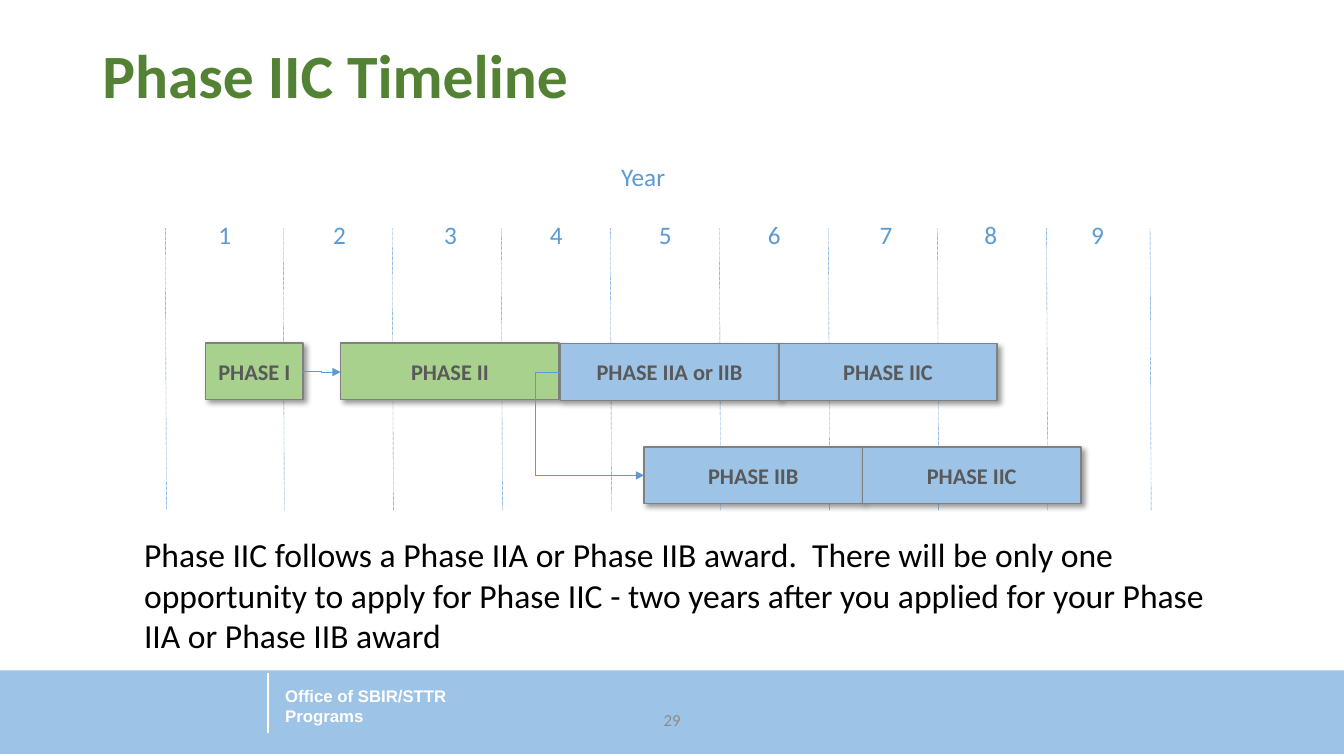
"""Build the Phase IIC timeline slide."""
from lxml import etree
from pptx import Presentation
from pptx.dml.color import RGBColor as Rgb
from pptx.enum.dml import MSO_LINE as Dash
from pptx.enum.shapes import MSO_CONNECTOR as Conn, MSO_SHAPE as Kind
from pptx.enum.text import MSO_ANCHOR as Anchor, PP_ALIGN as Align
from pptx.oxml import parse_xml
from pptx.oxml.ns import nsdecls, qn
from pptx.util import Pt

THEME = {
    "green": "A9D18E", "blue": "9DC3E6", "edge": "808080", "line": "5B9BD5",
    "white": "FFFFFF", "title": {"size": 44, "color": "548235", "bold": True},
    "axis": {"size": 18, "color": "5B9BD5"},
    "phase": {"size": 16, "color": "595959", "bold": True},
    "body": {"size": 24, "color": "000000"},
    "office": {"size": 12, "color": "FFFFFF", "bold": True, "name": "Arial"},
    "page": {"size": 12, "color": "8C8C8C"},
}
TITLE = "Phase IIC Timeline"
BODY = ("Phase IIC follows a Phase IIA or Phase IIB award.  There will be only one "
        "opportunity to apply for Phase IIC - two years after you applied for your "
        "Phase IIA or Phase IIB award")
MIDS = [160.6, 242.6, 321.8, 397.4, 475.2, 553, 632.9, 707.8, 784]
YEAR = 77.9
SPAN = 156
CHAINS = [
    (147, 245, 69.4, "green", ["PHASE I"]),
    (243.4, 245, SPAN, "green", ["PHASE II"]),
    (400.3, 245.4, SPAN, "blue", ["PHASE IIA or IIB", "PHASE IIC"]),
    (460.1, 319.2, SPAN, "blue", ["PHASE IIB", "PHASE IIC"]),
]
TALL = 40.6
LINKS = [((215.6, 265.4), (243.4, 265.8), 50000),
         ((400.3, 265.8), (460.1, 339.6), -30100)]

deck = Presentation()
deck.slide_width, deck.slide_height = Pt(960), Pt(540)
slide = deck.slides.add_slide(deck.slide_layouts[6])
shapes = slide.shapes


def write(shape, text, style, align=Align.CENTER, anchor=Anchor.TOP, space=1.0):
    """Put styled text in a shape."""
    frame = shape.text_frame
    frame.word_wrap, frame.vertical_anchor = True, anchor
    para = frame.paragraphs[0]
    para.text, para.alignment, para.line_spacing = text, align, space
    look = {"name": "Calibri", "bold": False, **THEME[style]}
    para.font.color.rgb = Rgb.from_string(look.pop("color"))
    look["size"] = Pt(look["size"])
    for key, val in look.items():
        setattr(para.font, key, val)


def label(box, text, style, **form):
    """Add a text box."""
    write(shapes.add_textbox(*map(Pt, box)), text, style, **form)


def block(box, fill, edge=None):
    """Add a filled rectangle."""
    shape = shapes.add_shape(Kind.RECTANGLE, *map(Pt, box))
    shape.shadow.inherit = False
    shape.fill.solid()
    shape.fill.fore_color.rgb = Rgb.from_string(THEME[fill])
    if edge:
        shape.line.color.rgb = Rgb.from_string(THEME[edge])
        shape.line.width = Pt(1)
    else:
        shape.line.fill.background()
    return shape


def rule(start, end, color, width, kind=Conn.STRAIGHT):
    """Add a connector with no shadow."""
    line = shapes.add_connector(kind, *map(Pt, start + end))
    line.line.color.rgb = Rgb.from_string(THEME[color])
    line.line.width = Pt(width)
    etree.SubElement(line._element.spPr, qn("a:effectLst"))
    return line


def shade(shape):
    """Give a shape a soft shadow to the lower right."""
    glow = shape._element.spPr.find(qn("a:effectLst"))
    glow.append(parse_xml(
        f'<a:outerShdw {nsdecls("a")} blurRad="{Pt(4)}" dist="{Pt(3)}" dir="2700000" '
        'algn="tl" rotWithShape="0"><a:srgbClr val="000000"><a:alpha val="40000"/>'
        '</a:srgbClr></a:outerShdw>'))


def main():
    """Draw the slide and save it."""
    block((0, 478.8, 960, 59.8), "blue")
    label((196.6, 485.3, 151.9, 37.4), "Office of SBIR/STTR Programs", "office",
          align=Align.LEFT, anchor=Anchor.MIDDLE)
    rule((191.5, 481), (191.5, 523.4), "white", 1)

    marks = [118.1] + [202.3 + YEAR * i for i in range(8)] + [821.5]
    for x in marks:
        line = rule((x, 163), (x + 0.8, 365), "line", 0.25)
        line.line.dash_style = Dash.ROUND_DOT
    for year, mid in enumerate(MIDS, 1):
        label((mid - 32.4, 153.4, 64.8, 26.6), str(year), "axis")
    label((427, 111.6, 64.8, 36), "Year", "axis")
    label((66, 28.8, 828, 104.4), TITLE, "title", align=Align.LEFT, space=0.9)

    for left, top, width, fill, names in CHAINS:
        for i, name in enumerate(names):
            bar = block((left + i * width, top, width, TALL), fill, "edge")
            shade(bar)
            write(bar, name, "phase", anchor=Anchor.MIDDLE)
    for start, end, bend in LINKS:
        link = rule(start, end, "line", 0.5, Conn.ELBOW)
        etree.SubElement(link.line._get_or_add_ln(), qn("a:tailEnd"), type="triangle")
        geom = link._element.spPr.find(qn("a:prstGeom"))
        etree.SubElement(geom.find(qn("a:avLst")), qn("a:gd"),
                         name="adj1", fmla=f"val {bend}")

    label((95.8, 378, 771.8, 94.3), BODY, "body", align=Align.LEFT)
    label((372.2, 499.7, 216, 28.8), "29", "page", anchor=Anchor.MIDDLE)
    deck.save("out.pptx")


if __name__ == "__main__":
    main()
